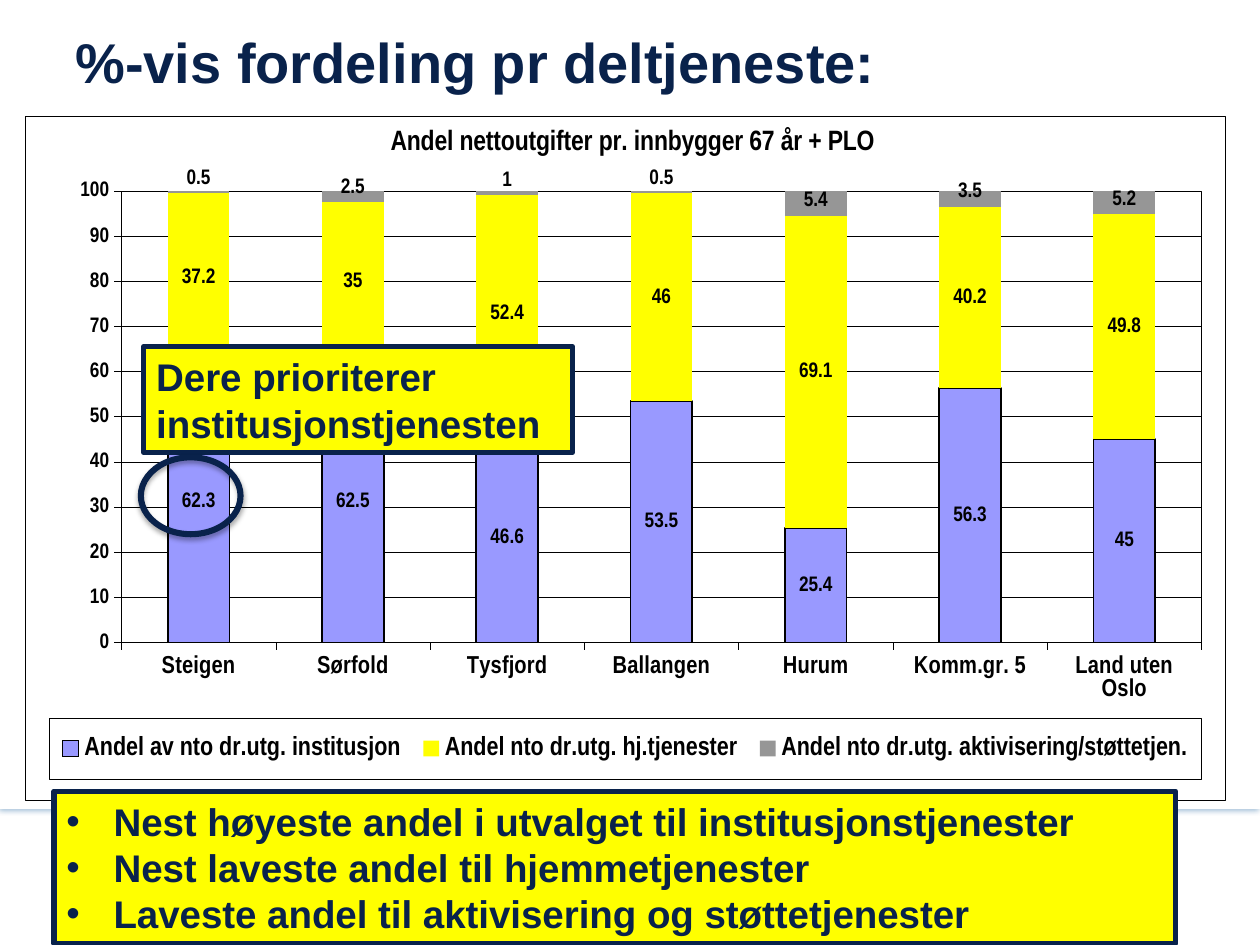
import pptx
import pptx.chart.data
import pptx.dml.color
import pptx.enum.chart
import pptx.enum.shapes
import pptx.enum.text
import pptx.oxml
import pptx.oxml.ns
from pptx.util import Cm, Pt

COLORS = {
    "navy": "09224B", "yellow": "FFFF00", "white": "FFFFFF", "black": "000000",
    "lilac": "9999FF", "grey": "969696", "blue": "005193",
}
LABEL = pptx.enum.chart.XL_LABEL_POSITION
SHAPE = pptx.enum.shapes.MSO_SHAPE
BODY_FONT, CHART_FONT = "Arial", "Arial Narrow"

PLACES = ["Steigen", "Sørfold", "Tysfjord", "Ballangen", "Hurum", "Komm.gr. 5", "Land uten Oslo"]
SERIES = [
    ("Andel av nto dr.utg. institusjon", [62.3, 62.5, 46.6, 53.5, 25.4, 56.3, 45], "lilac", LABEL.CENTER),
    ("Andel nto dr.utg. hj.tjenester", [37.2, 35, 52.4, 46, 69.1, 40.2, 49.8], "yellow", LABEL.CENTER),
    ("Andel nto dr.utg. aktivisering/støttetjen.", [0.5, 2.5, 1, 0.5, 5.4, 3.5, 5.2], "grey", LABEL.INSIDE_BASE),
]
FINDINGS = [
    "Nest høyeste andel i utvalget til institusjonstjenester",
    "Nest laveste andel til hjemmetjenester",
    "Laveste andel til aktivisering og støttetjenester",
]


def rgb(name):
    return pptx.dml.color.RGBColor.from_string(COLORS[name])


def parse_xml(tag, inner):
    namespaces = pptx.oxml.ns.nsdecls("a", "c")
    return pptx.oxml.parse_xml(f"<{tag} {namespaces}>{inner}</{tag}>")


def set_font(font, size, color="navy", name=BODY_FONT):
    font.size, font.bold, font.name = Pt(size), True, name
    font.color.rgb = rgb(color)


def set_line(line, color, width):
    line.color.rgb = rgb(color)
    line.width = Pt(width)


def add_figure(slide, kind, place, fill=None, line_width=None, shadow=None):
    """Add a preset shape; shadow names the colour of a soft shadow below it."""
    figure = slide.shapes.add_shape(kind, *map(Cm, place))
    figure.shadow.inherit = False
    if fill:
        figure.fill.solid()
        figure.fill.fore_color.rgb = rgb(fill)
    else:
        figure.fill.background()
    if line_width:
        set_line(figure.line, "navy", line_width)
    else:
        figure.line.fill.background()
    if shadow:
        effects = figure._element.spPr.find(pptx.oxml.ns.qn("a:effectLst"))
        effects.append(parse_xml(
            'a:outerShdw blurRad="39370" dist="22860" dir="5400000" rotWithShape="0"'.split()[0],
            f'<a:srgbClr val="{COLORS[shadow]}"><a:alpha val="35000"/></a:srgbClr>'))
        for key, value in {"blurRad": "39370", "dist": "22860", "dir": "5400000", "rotWithShape": "0"}.items():
            effects[0].set(key, value)
    return figure


def write(box, lines, size, bulleted=False):
    frame = box.text_frame
    frame.word_wrap = True
    frame.vertical_anchor = pptx.enum.text.MSO_ANCHOR.MIDDLE
    for index, line in enumerate(lines):
        para = frame.add_paragraph() if index else frame.paragraphs[0]
        para.text = line
        para.alignment = pptx.enum.text.PP_ALIGN.LEFT
        if bulleted:
            properties = para._p.get_or_add_pPr()
            properties.set("marL", str(Cm(0.95)))
            properties.set("indent", str(-Cm(0.95)))
            properties.append(parse_xml("a:buFont", ""))
            properties[-1].set("typeface", BODY_FONT)
            properties.append(parse_xml("a:buChar", ""))
            properties[-1].set("char", "•")
        set_font(para.font, size)


def place_part(part, x, y, w=None, h=None, inner=False):
    """Give a chart part a manual layout in fractions of the chart."""
    target = '<c:layoutTarget val="inner"/>' if inner else ""
    modes = '<c:xMode val="edge"/><c:yMode val="edge"/>'
    sizes = "".join(f'<c:{key} val="{value}"/>' for key, value in zip("xywh", (x, y, w, h)) if value is not None)
    layout = parse_xml("c:layout", f"<c:manualLayout>{target}{modes}{sizes}</c:manualLayout>")
    old = part.find(pptx.oxml.ns.qn("c:layout"))
    if old is not None:
        part.remove(old)
    overlay = part.find(pptx.oxml.ns.qn("c:overlay"))
    if overlay is not None:
        overlay.addprevious(layout)
    else:
        part.insert(0, layout)


def framed():
    """White fill with a thin black border for a chart part."""
    def paint(color):
        return f'<a:solidFill><a:srgbClr val="{COLORS[color]}"/></a:solidFill>'
    return parse_xml("c:spPr", f'{paint("white")}<a:ln w="{Pt(0.25)}">{paint("black")}</a:ln>')


def style_axis(axis, size):
    axis.major_tick_mark = pptx.enum.chart.XL_TICK_MARK.OUTSIDE
    axis.minor_tick_mark = pptx.enum.chart.XL_TICK_MARK.NONE
    set_font(axis.tick_labels.font, size, "black", CHART_FONT)
    set_line(axis.format.line, "black", 0.25)


def style_series(series, color, position):
    series.format.fill.solid()
    series.format.fill.fore_color.rgb = rgb(color)
    if color == "lilac":
        set_line(series.format.line, "black", 1)
    else:
        series.format.line.fill.background()
    labels = series.data_labels
    labels.show_value = True
    labels.position = position
    set_font(labels.font, 12, "black", CHART_FONT)


def add_share_chart(slide):
    data = pptx.chart.data.CategoryChartData()
    data.categories = PLACES
    for name, values, _, _ in SERIES:
        data.add_series(name, values)
    place = map(Cm, (0.51, 2.33, 24.2, 13.8))
    chart = slide.shapes.add_chart(pptx.enum.chart.XL_CHART_TYPE.COLUMN_STACKED, *place, data).chart
    set_font(chart.font, 10, "black", CHART_FONT)

    title = chart.chart_title
    title.text_frame.text = "Andel nettoutgifter pr. innbygger 67 år + PLO"
    set_font(title.text_frame.paragraphs[0].font, 16, "black", CHART_FONT)
    place_part(title._element, 0.3, 0.01)

    plot = chart.plots[0]
    plot.gap_width, plot.overlap, plot.vary_by_categories = 150, 100, False
    for series, (_, _, color, position) in zip(plot.series, SERIES):
        style_series(series, color, position)

    style_axis(chart.category_axis, 14)
    scale = chart.value_axis
    style_axis(scale, 12)
    scale.minimum_scale, scale.maximum_scale, scale.major_unit = 0, 100, 10
    set_line(scale.major_gridlines.format.line, "black", 0.25)

    chart.has_legend = True
    legend = chart.legend
    legend.position = pptx.enum.chart.XL_LEGEND_POSITION.BOTTOM
    legend.include_in_layout = False
    set_font(legend.font, 15, "black", CHART_FONT)
    place_part(legend._element, 0.02, 0.88, 0.96, 0.09)
    legend._element.find(pptx.oxml.ns.qn("c:overlay")).addnext(framed())

    body = chart._chartSpace.chart
    place_part(body.plotArea, 0.08, 0.11, 0.9, 0.66, inner=True)
    body.plotArea.append(framed())
    body.addnext(framed())


def main():
    deck = pptx.Presentation()
    deck.slide_width, deck.slide_height = Cm(25.4), Cm(19.05)
    slide = deck.slides.add_slide(deck.slide_layouts[6])

    add_figure(slide, SHAPE.RECTANGLE, (0, 0, 25.4, 16.31), "white", shadow="blue")
    title = slide.shapes.add_textbox(*map(Cm, (1.27, 0.33, 22.86, 1.8)))
    write(title, ["%-vis fordeling pr deltjeneste:"], 32)
    add_share_chart(slide)

    callout = add_figure(slide, SHAPE.RECTANGLE, (2.9, 6.99, 8.64, 2.13), "yellow", 3)
    write(callout, ["Dere prioriterer institusjonstjenesten"], 22)
    add_figure(slide, SHAPE.OVAL, (2.84, 9.22, 2.01, 1.55), line_width=3.5, shadow="black")
    summary = add_figure(slide, SHAPE.RECTANGLE, (1.09, 15.95, 22.61, 3.07), "yellow", 3)
    write(summary, FINDINGS, 22, bulleted=True)

    deck.save("out.pptx")


if __name__ == "__main__":
    main()
